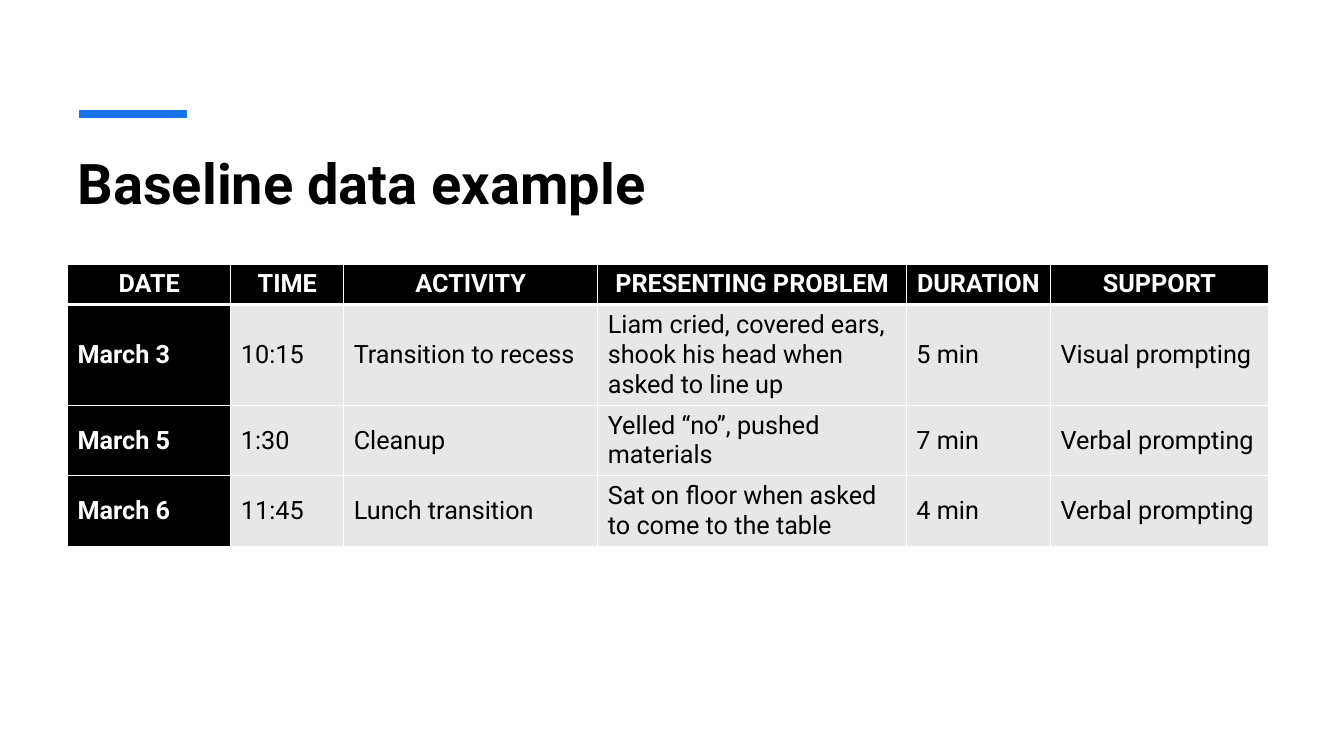
from pptx import Presentation
from pptx.dml.color import RGBColor
from pptx.enum.shapes import MSO_CONNECTOR as Line
from pptx.enum.text import MSO_ANCHOR as Anchor, PP_ALIGN as Align
from pptx.oxml import parse_xml
from pptx.oxml.ns import nsdecls
from pptx.util import Inches, Pt

BLACK, WHITE, GREY, BLUE = "000000", "FFFFFF", "E7E7E7", "1973EB"
WIDTHS = [1.62, 1.12, 2.52, 3.06, 1.43, 2.16]
HEIGHTS = [0.38, 0.99, 0.68, 0.68]
ROWS = [
    ["DATE", "TIME", "ACTIVITY", "PRESENTING PROBLEM", "DURATION", "SUPPORT"],
    ["March 3", "10:15", "Transition to recess",
     "Liam cried, covered ears, shook his head when asked to line up",
     "5 min", "Visual prompting"],
    ["March 5", "1:30", "Cleanup", "Yelled “no”, pushed materials",
     "7 min", "Verbal prompting"],
    ["March 6", "11:45", "Lunch transition",
     "Sat on floor when asked to come to the table",
     "4 min", "Verbal prompting"],
]


def color(code):
    return RGBColor.from_string(code)


def write(frame, text, size=18, ink=BLACK, bold=False, align=Align.LEFT):
    frame.word_wrap = True
    par = frame.paragraphs[0]
    par.alignment = align
    run = par.add_run()
    run.text = text
    font = run.font
    font.name = "Roboto"
    font.size = Pt(size)
    font.bold = bold
    font.color.rgb = color(ink)


class Deck:
    def __init__(self):
        self.show = Presentation()
        self.show.slide_width = Inches(13.33)
        self.show.slide_height = Inches(7.5)
        self.slide = self.show.slides.add_slide(self.show.slide_layouts[6])

    def rule(self, left, right, top, width, ink):
        line = self.slide.shapes.add_connector(
            Line.STRAIGHT, Inches(left), Inches(top), Inches(right), Inches(top))
        line.line.color.rgb = color(ink)
        line.line.width = Pt(width)
        line._element.spPr.append(parse_xml(f'<a:effectLst {nsdecls("a")}/>'))

    def title(self, text, *place):
        box = self.slide.shapes.add_textbox(*map(Inches, place))
        box.text_frame.vertical_anchor = Anchor.BOTTOM
        write(box.text_frame, text, size=40, bold=True)

    def border(self, cell, top, base):
        props = cell._tc.get_or_add_tcPr()
        sides = {"L": 1, "R": 1, "T": top, "B": base}
        for spot, (side, width) in enumerate(sides.items()):
            props.insert(spot, parse_xml(
                f'<a:ln{side} {nsdecls("a")} w="{Pt(width)}"><a:solidFill>'
                f'<a:srgbClr val="{WHITE}"/></a:solidFill></a:ln{side}>'))

    def table(self, rows, left, top):
        grid = self.slide.shapes.add_table(
            len(rows), len(WIDTHS), Inches(left), Inches(top),
            Inches(sum(WIDTHS)), Inches(sum(HEIGHTS))).table
        for col, width in zip(grid.columns, WIDTHS):
            col.width = Inches(width)
        for r, (row, height) in enumerate(zip(rows, HEIGHTS)):
            grid.rows[r].height = Inches(height)
            for c, text in enumerate(row):
                cell = grid.cell(r, c)
                head = r == 0 or c == 0
                cell.vertical_anchor = Anchor.MIDDLE
                cell.fill.solid()
                cell.fill.fore_color.rgb = color(BLACK if head else GREY)
                self.border(cell, 3 if r == 1 else 1, 3 if r == 0 else 1)
                write(cell.text_frame, text, bold=head,
                      ink=WHITE if head else BLACK,
                      align=Align.LEFT if r else Align.CENTER)


def main():
    deck = Deck()
    deck.rule(0.78, 1.85, 1.13, 6, BLUE)
    deck.title("Baseline data example", 0.67, 1.33, 10.49, 0.86)
    deck.table(ROWS, 0.67, 2.62)
    deck.show.save("out.pptx")


if __name__ == "__main__":
    main()
